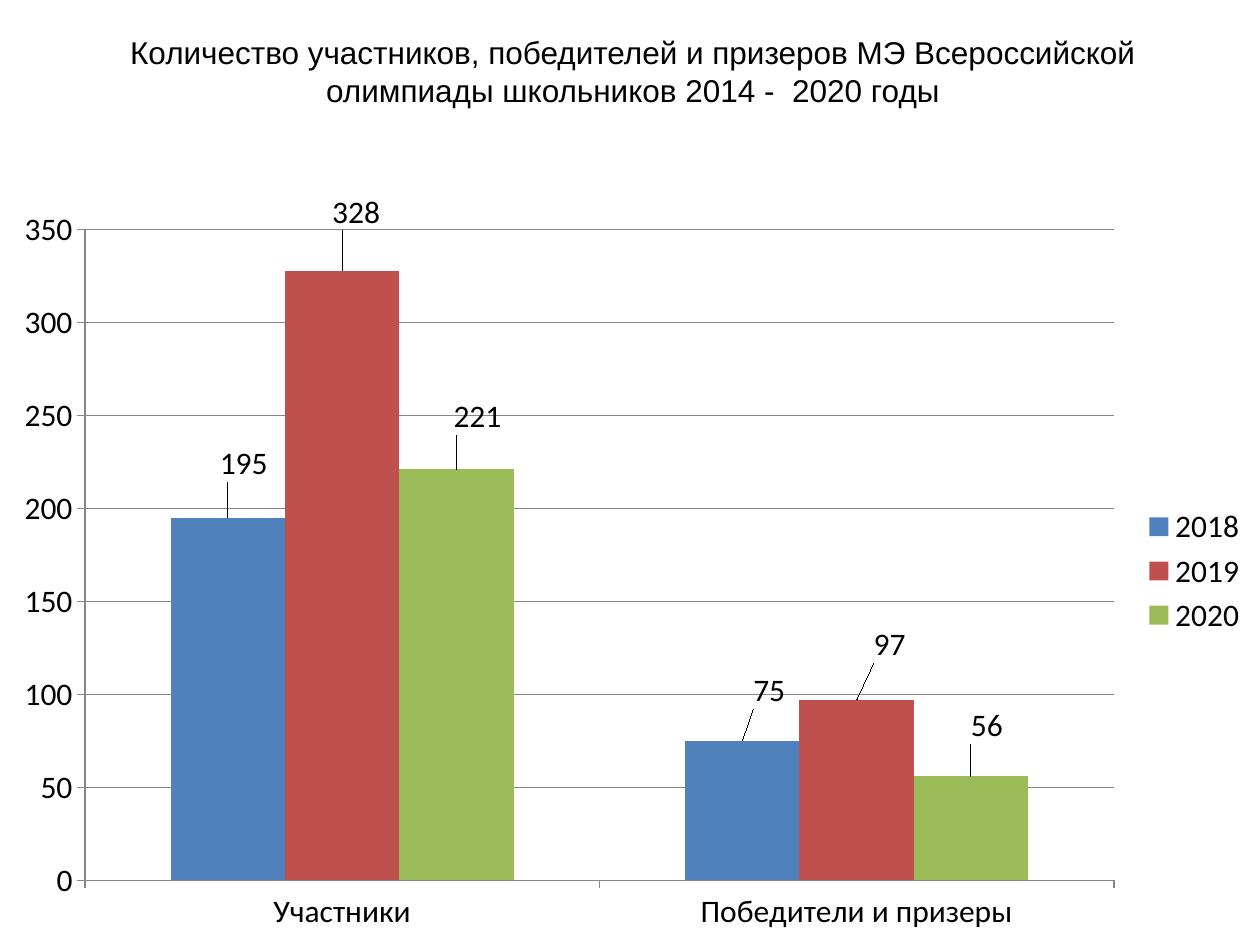
from typing import NamedTuple

from lxml import etree
from pptx import Presentation
from pptx import util as u
from pptx.chart.data import CategoryChartData
from pptx.dml.color import RGBColor
from pptx.enum import chart as ch
from pptx.enum import text
from pptx.oxml.ns import qn

EMU_PER_PX = 914400 / 126
CHART_TOP, CHART_W, CHART_H = 193, 1260, 752
CATEGORIES = ("Участники", "Победители и призеры")
GRID = "878787"
TITLE = ("Количество участников, победителей и призеров МЭ Всероссийской "
         "олимпиады школьников 2014 -  2020 годы")


class Year(NamedTuple):
    name: str
    values: tuple[int, ...]
    color: str
    label_shifts: tuple[tuple[int, int], ...]


YEARS = (
    Year("2018", (195, 75), "4F81BD", ((16, -31), (27, -27))),
    Year("2019", (328, 97), "C0504D", ((14, -35), (33, -32))),
    Year("2020", (221, 56), "9BBB59", ((21, -29), (16, -27))),
)


def px(n: int) -> u.Emu:
    return u.Emu(round(n * EMU_PER_PX))


def rgb(value: str) -> RGBColor:
    return RGBColor.from_string(value)


def style_font(font, *, size: int, name: str, color: str = "000000") -> None:
    font.size = u.Pt(size)
    font.name = name
    font.bold = False
    font.color.rgb = rgb(color)


def write_text(tf, content: str, *, align=text.PP_ALIGN.CENTER, **fmt) -> None:
    tf.word_wrap = True
    tf.vertical_anchor = text.MSO_ANCHOR.MIDDLE
    p = tf.paragraphs[0]
    p.alignment = align
    r = p.add_run()
    r.text = content
    style_font(r.font, **fmt)


def style_line(line) -> None:
    line.color.rgb = rgb(GRID)
    line.width = u.Pt(0.75)


def add_layout(parent, index: int, **settings) -> None:
    for old in parent.findall(qn("c:layout")):
        parent.remove(old)
    layout = etree.Element(qn("c:layout"))
    manual = etree.SubElement(layout, qn("c:manualLayout"))
    for tag, value in settings.items():
        etree.SubElement(manual, qn(f"c:{tag}")).set("val", str(value))
    parent.insert(index, layout)


def format_series(series, year: Year) -> None:
    series.format.fill.solid()
    series.format.fill.fore_color.rgb = rgb(year.color)
    series.data_labels.show_value = True
    for i in range(len(year.values)):
        series.points[i].data_label.position = ch.XL_LABEL_POSITION.OUTSIDE_END
    labels = series._element.findall(f".//{qn('c:dLbl')}")
    for label, (dx, dy) in zip(labels, year.label_shifts):
        add_layout(label, 1, x=dx / CHART_W, y=dy / CHART_H)


def add_results_chart(s) -> None:
    data = CategoryChartData()
    data.categories = CATEGORIES
    for year in YEARS:
        data.add_series(year.name, year.values)
    chart = s.shapes.add_chart(ch.XL_CHART_TYPE.COLUMN_CLUSTERED, 0, px(CHART_TOP),
                               px(CHART_W), px(CHART_H), data).chart
    style_font(chart.font, size=18, name="Calibri")
    chart.has_title = False
    chart.has_legend = True
    chart.legend.position = ch.XL_LEGEND_POSITION.RIGHT
    chart.legend.include_in_layout = False

    plot = chart.plots[0]
    plot.gap_width = 150
    plot.overlap = 0
    plot.vary_by_categories = False
    for series, year in zip(plot.series, YEARS):
        format_series(series, year)

    axis = chart.value_axis
    axis.minimum_scale, axis.maximum_scale, axis.major_unit = 0, 350, 50
    axis.has_major_gridlines = True
    style_line(axis.major_gridlines.format.line)
    for ax in (axis, chart.category_axis):
        ax.major_tick_mark = ch.XL_TICK_MARK.OUTSIDE
        style_line(ax.format.line)

    plot_area = chart._chartSpace.find(f".//{qn('c:plotArea')}")
    add_layout(plot_area, 0, layoutTarget="inner", xMode="edge", yMode="edge",
               x=85 / CHART_W, y=33 / CHART_H, w=1029 / CHART_W, h=654 / CHART_H)


def main() -> None:
    prs = Presentation()
    prs.slide_width, prs.slide_height = px(1260), px(945)
    s = prs.slides.add_slide(prs.slide_layouts[5])
    add_results_chart(s)
    sp = s.shapes.title
    sp.left, sp.top, sp.width, sp.height = px(35), px(26), px(1196), px(90)
    write_text(sp.text_frame, TITLE, size=18, name="Arial")
    prs.save("out.pptx")


if __name__ == "__main__":
    main()
